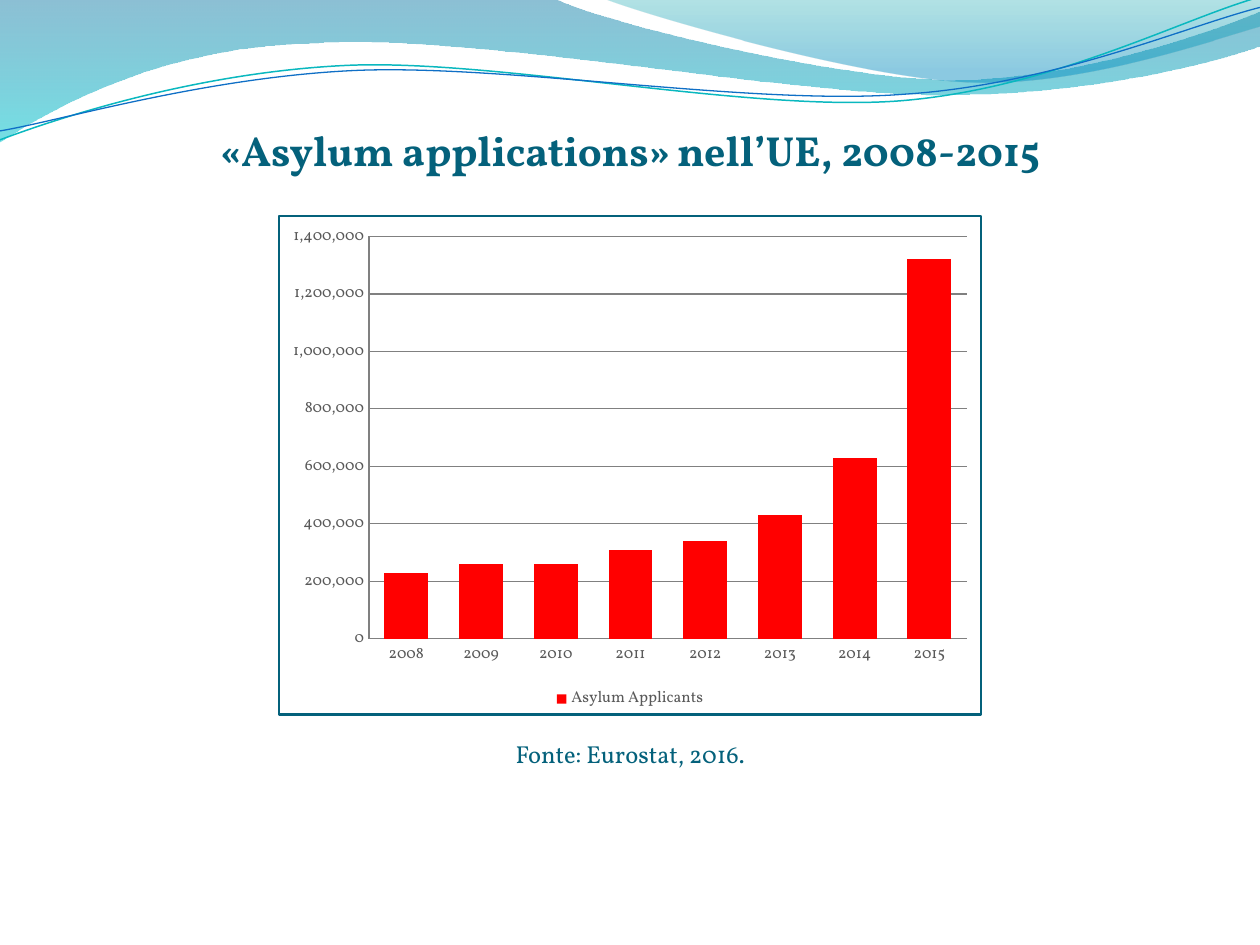
from dataclasses import dataclass

from lxml import etree
from pptx import Presentation
from pptx.chart.data import CategoryChartData
from pptx.dml.color import RGBColor
from pptx.enum.chart import XL_CHART_TYPE, XL_LEGEND_POSITION, XL_TICK_MARK
from pptx.enum.text import MSO_ANCHOR, PP_ALIGN
from pptx.oxml import parse_xml
from pptx.oxml.ns import nsdecls, qn
from pptx.util import Cm, Pt

COLUMNS = XL_CHART_TYPE.COLUMN_CLUSTERED
BOTTOM = XL_LEGEND_POSITION.BOTTOM
NO_TICK = XL_TICK_MARK.NONE
CENTER = PP_ALIGN.CENTER
MIDDLE = MSO_ANCHOR.MIDDLE

FONT = "Vollkorn"
TEAL, GRAY, LABEL_GRAY, RED = "04617B", "808080", "595959", "FF0000"
STRAND_ROTATION = 357.3

Point = tuple[float, float]


@dataclass
class Wave:
    """Outline in cm: a segment of one point is straight, of three a Bezier curve."""
    start: Point
    segments: list[tuple[Point, ...]]
    stops: tuple[tuple[int, str, int], ...] = ()  # position %, colour, opacity %
    line: str = ""
    width: float = 0


@dataclass
class Caption:
    text: str
    left: float
    top: float
    width: float
    height: float
    size: int
    bold: bool = False


WAVES = [
    # Wide band
    Wave((0, 0), [
        ((11.18, -0.03),),
        ((12.09, 0.43), (16.87, 1.6), (19.25, 1.6)),
        ((21.67, 1.6), (24.33, 0.66), (25.4, 0.23)),
        ((25.43, 0.91),),
        ((24.97, 1.12), (22.1, 1.93), (18.95, 1.91)),
        ((15.8, 1.91), (9.7, 0.71), (6.53, 0.86)),
        ((3.28, 0.91), (1.17, 2.11), (-0.03, 2.87)),
        ((0, 0),),
    ], stops=((0, "0074A1", 45), (100, "00C6CF", 55))),
    # Right-hand crest
    Wave((12.17, -0.03), [
        ((12.93, 0.28), (17.32, 1.57), (19.53, 1.65)),
        ((21.74, 1.75), (24.41, 0.81), (25.4, 0.53)),
        ((25.4, 0),),
        ((12.17, -0.03),),
    ], stops=((0, "00A1A9", 30), (80, "008BBF", 45))),
    # Thin strands, before their rotation
    Wave((-0.05, 2.22), [
        ((1.19, 1.82), (4.02, 1.04), (7.05, 1.05)),
        ((10.05, 1.07), (15.02, 2.37), (18.08, 2.29)),
        ((21.13, 2.2), (23.86, 0.91), (25.41, 0.55)),
    ], line="0AB8BF", width=0.85),
    Wave((-0.04, 2.04), [
        ((1.16, 1.9), (4.17, 1.15), (7.2, 1.16)),
        ((10.25, 1.18), (15.13, 2.25), (18.19, 2.16)),
        ((21.21, 2.11), (23.93, 1.06), (25.45, 0.75)),
    ], line="0F6FC6", width=0.75),
]

CAPTIONS = [
    Caption("«Asylum applications» nell’UE, 2008-2015", 0, 2.39, 25.4, 1.27, 24, True),
    Caption("Fonte: Eurostat, 2016.", 7.98, 14.77, 9.45, 0.86, 14),
]

APPLICANTS = {
    "2008": 230000, "2009": 260000, "2010": 260000, "2011": 310000,
    "2012": 340000, "2013": 430000, "2014": 630000, "2015": 1320000,
}


def rgb(color: str) -> RGBColor:
    return RGBColor.from_string(color)


def style_font(font, size: float, color: str, bold: bool = False) -> None:
    font.name, font.size, font.bold = FONT, Pt(size), bold
    font.color.rgb = rgb(color)


def style_line(line, color: str, width: float = 0.75) -> None:
    line.color.rgb = rgb(color)
    line.width = Pt(width)


def bend(shape, segments: list[tuple[Point, ...]]) -> None:
    """Join the straight steps of each three-point segment into one curve."""
    steps = iter(list(shape._element.iter(qn("a:lnTo"))))
    for segment in segments:
        first, *others = [next(steps) for _ in segment]
        if others:
            curve = etree.Element(qn("a:cubicBezTo"))
            first.addprevious(curve)
            for step in (first, *others):
                curve.append(step[0])
                step.getparent().remove(step)


def draw_wave(slide, wave: Wave) -> None:
    builder = slide.shapes.build_freeform(*map(Cm, wave.start), scale=1.0)
    points = [(Cm(x), Cm(y)) for segment in wave.segments for x, y in segment]
    builder.add_line_segments(points, close=False)
    shape = builder.convert_to_shape()
    shape.shadow.inherit = False
    bend(shape, wave.segments)
    if not wave.stops:
        shape.rotation = STRAND_ROTATION
        shape.fill.background()
        style_line(shape.line, wave.line, wave.width)
        return
    outline = next(shape._element.iter(qn("a:path")))
    etree.SubElement(outline, qn("a:close"))
    shape.line.fill.background()
    stops = "".join(
        f'<a:gs pos="{place * 1000}"><a:srgbClr val="{color}">'
        f'<a:alpha val="{opacity * 1000}"/></a:srgbClr></a:gs>'
        for place, color, opacity in wave.stops)
    gradient = parse_xml(f'<a:gradFill {nsdecls("a")}><a:gsLst>{stops}</a:gsLst>'
                         '<a:lin ang="5400000" scaled="0"/></a:gradFill>')
    shape._element.spPr.find(qn("a:custGeom")).addnext(gradient)


def draw_caption(slide, caption: Caption) -> None:
    box = slide.shapes.add_textbox(Cm(caption.left), Cm(caption.top),
                                   Cm(caption.width), Cm(caption.height))
    frame = box.text_frame
    frame.word_wrap = True
    frame.vertical_anchor = MIDDLE
    frame.text = caption.text
    paragraph = frame.paragraphs[0]
    paragraph.alignment = CENTER
    style_font(paragraph.runs[0].font, caption.size, TEAL, caption.bold)


def draw_chart(slide) -> None:
    data = CategoryChartData(number_format="#,##0")
    data.categories = list(APPLICANTS)
    data.add_series("Asylum Applicants", list(APPLICANTS.values()))
    chart = slide.shapes.add_chart(COLUMNS, Cm(5.6), Cm(4.33), Cm(14.2), Cm(10.1),
                                   data).chart
    style_font(chart.font, 10, "000000")
    chart.has_title = False
    chart.has_legend = True
    chart.legend.position = BOTTOM
    chart.legend.include_in_layout = False
    style_font(chart.legend.font, 9, LABEL_GRAY)

    # Columns
    plot = chart.plots[0]
    plot.gap_width = 70
    plot.vary_by_categories = False
    fill = plot.series[0].format.fill
    fill.solid()
    fill.fore_color.rgb = rgb(RED)

    # Axes
    for axis in (chart.category_axis, chart.value_axis):
        axis.major_tick_mark = axis.minor_tick_mark = NO_TICK
        style_font(axis.tick_labels.font, 9, LABEL_GRAY)
        style_line(axis.format.line, GRAY)
    values = chart.value_axis
    values.tick_labels.number_format = "#,##0"
    values.tick_labels.number_format_is_linked = False
    values.has_major_gridlines = True
    style_line(values.major_gridlines.format.line, GRAY)

    # Frame around the chart
    chart._chartSpace.chart.addnext(parse_xml(
        f'<c:spPr {nsdecls("c", "a")}><a:noFill/><a:ln w="{Pt(1.5)}"><a:solidFill>'
        f'<a:srgbClr val="{TEAL}"/></a:solidFill></a:ln></c:spPr>'))


def main() -> None:
    deck = Presentation()
    deck.slide_width, deck.slide_height = Cm(25.4), Cm(19.05)
    slide = deck.slides.add_slide(deck.slide_layouts[6])
    for wave in WAVES:
        draw_wave(slide, wave)
    for caption in CAPTIONS:
        draw_caption(slide, caption)
    draw_chart(slide)
    deck.save("out.pptx")


if __name__ == "__main__":
    main()
